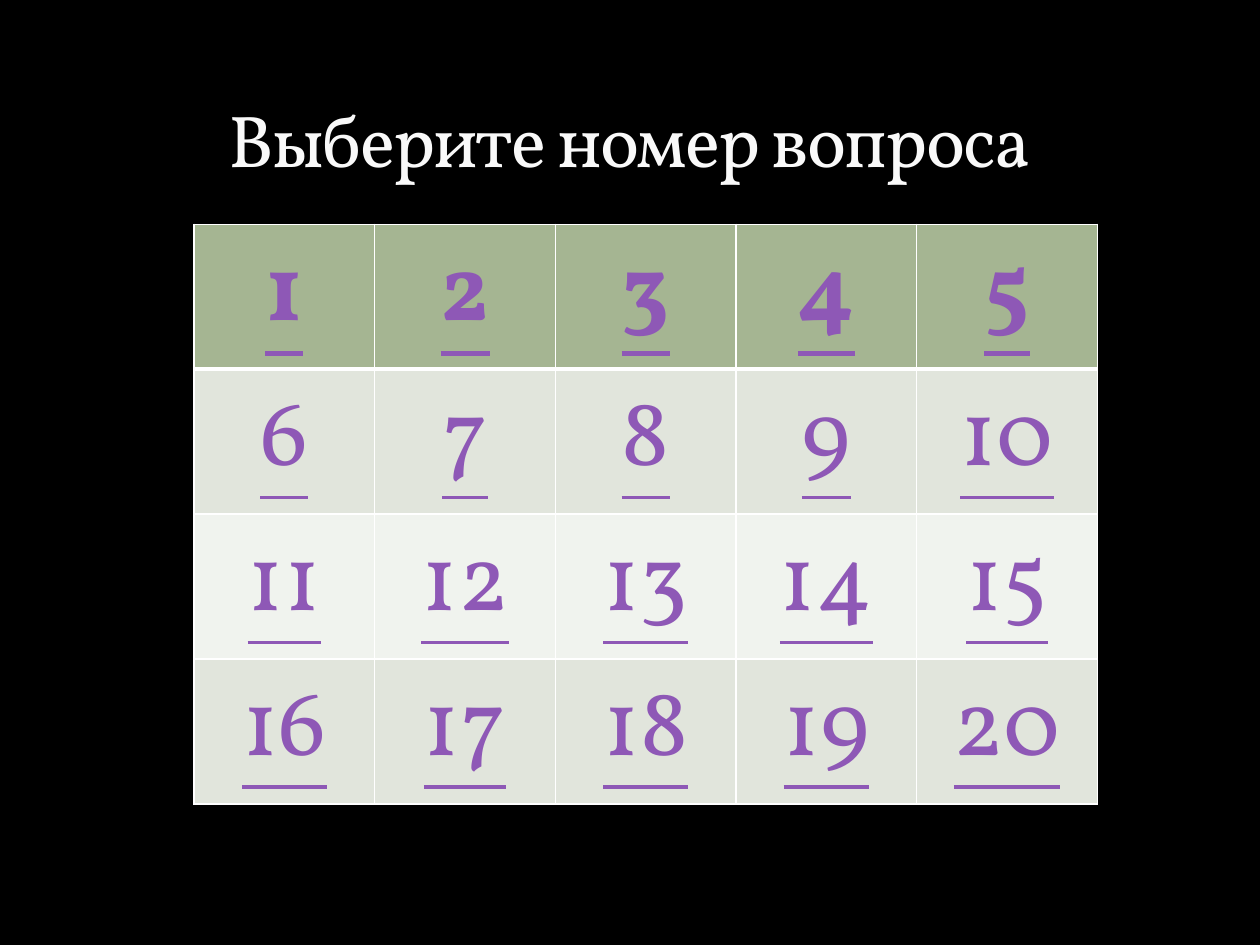
import pptx
import pptx.util
import pptx.dml.color
import pptx.enum.text
import pptx.oxml.ns
from dataclasses import dataclass
from lxml import etree

TITLE = "Выберите номер вопроса"
COLS, ROWS = 5, 4
QUESTIONS = [[str(r * COLS + c + 1) for c in range(COLS)] for r in range(ROWS)]

WIDTH, HEIGHT = 10, 7.5
TITLE_BOX = (0.5, 0.17, 9, 1.33)
GRID_LEFT, GRID_TOP = 1.54, 1.78
COL_W, ROW_H = 1.434, 1.15


@dataclass(frozen=True)
class Theme:
    font: str = "Vollkorn"
    background: str = "000000"
    title: str = "F9F9F9"
    number: str = "8E58B6"
    border: str = "FFFFFF"
    header: str = "A5B592"
    bands: tuple = ("F0F3EE", "E1E5DC")
    title_size: int = 42
    number_size: int = 54
    thin: int = 1
    thick: int = 3


THEME = Theme()
qn = pptx.oxml.ns.qn


def rgb(value):
    return pptx.dml.color.RGBColor.from_string(value)


def add_text(tf, text, size, color):
    p = tf.paragraphs[0]
    p.alignment = pptx.enum.text.PP_ALIGN.CENTER
    r = p.add_run()
    r.text = text
    r.font.name = THEME.font
    r.font.size = pptx.util.Pt(size)
    r.font.color.rgb = rgb(color)
    return r


def set_borders(cell, widths):
    tc_pr = cell._tc.get_or_add_tcPr()
    for side, width in widths.items():
        ln = etree.SubElement(tc_pr, qn(f"a:ln{side}"), w=str(pptx.util.Pt(width)))
        fill = etree.SubElement(ln, qn("a:solidFill"))
        etree.SubElement(fill, qn("a:srgbClr"), val=THEME.border)


def add_title(s):
    sp = s.shapes.title
    sp.left, sp.top, sp.width, sp.height = map(pptx.util.Inches, TITLE_BOX)
    tf = sp.text_frame
    tf.word_wrap = True
    tf.vertical_anchor = pptx.enum.text.MSO_ANCHOR.BOTTOM
    r = add_text(tf, TITLE, THEME.title_size, THEME.title)
    r.font._element.set("spc", "-100")


def add_question_grid(s):
    box = (GRID_LEFT, GRID_TOP, COLS * COL_W, ROWS * ROW_H)
    table = s.shapes.add_table(ROWS, COLS, *map(pptx.util.Inches, box)).table
    for column in table.columns:
        column.width = pptx.util.Inches(COL_W)
    for i, row in enumerate(table.rows):
        row.height = pptx.util.Inches(ROW_H)
        is_header = i == 0
        widths = {
            "L": THEME.thin,
            "R": THEME.thin,
            "T": THEME.thick if i == 1 else THEME.thin,
            "B": THEME.thick if is_header else THEME.thin,
        }
        for cell, number in zip(row.cells, QUESTIONS[i]):
            set_borders(cell, widths)
            cell.fill.solid()
            cell.fill.fore_color.rgb = rgb(THEME.header if is_header else THEME.bands[i % 2])
            r = add_text(cell.text_frame, number, THEME.number_size, THEME.number)
            r.font.bold = is_header
            r.font.underline = True


def main():
    prs = pptx.Presentation()
    prs.slide_width = pptx.util.Inches(WIDTH)
    prs.slide_height = pptx.util.Inches(HEIGHT)
    s = prs.slides.add_slide(prs.slide_layouts.get_by_name("Title Only"))
    s.background.fill.solid()
    s.background.fill.fore_color.rgb = rgb(THEME.background)
    add_question_grid(s)
    add_title(s)
    prs.save("out.pptx")


if __name__ == "__main__":
    main()
